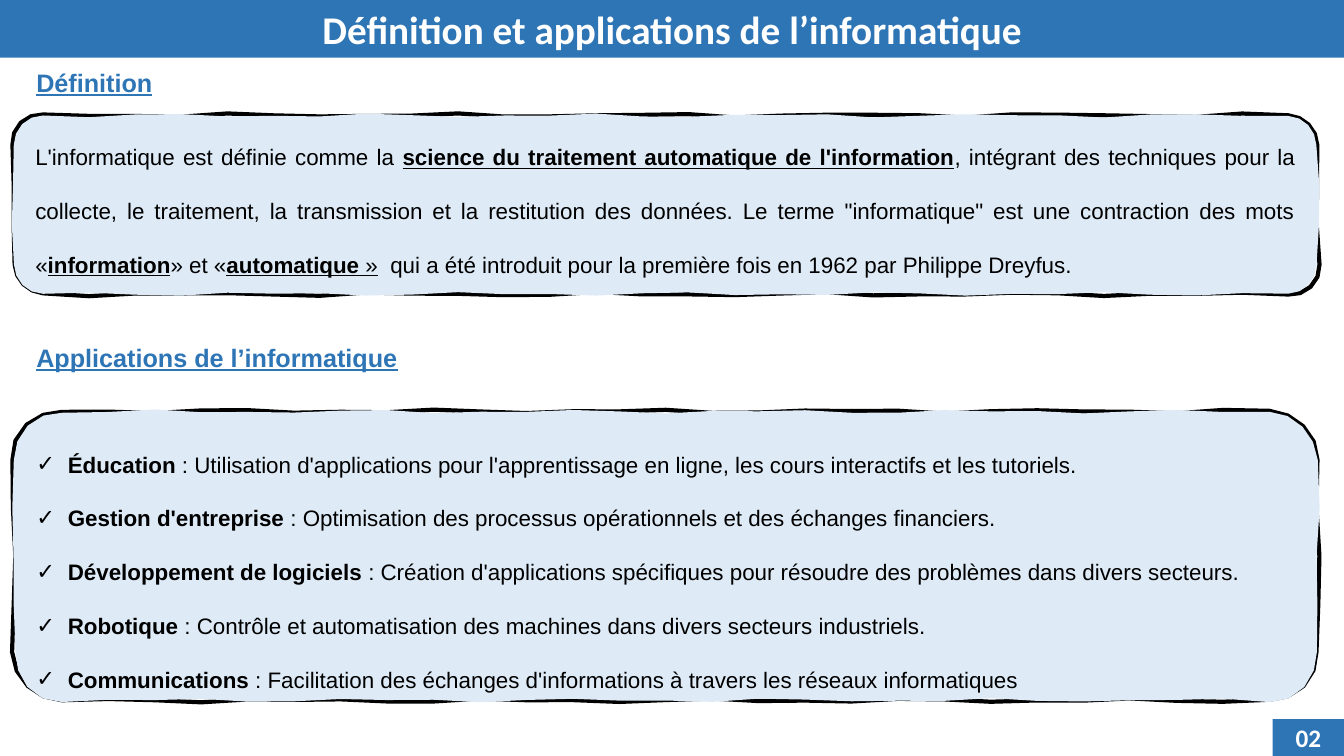
from dataclasses import dataclass
from math import cos, hypot, pi, sin
from typing import NamedTuple

from lxml import etree
from pptx import Presentation
from pptx.dml.color import RGBColor
from pptx.enum.shapes import MSO_SHAPE
from pptx.enum.text import MSO_ANCHOR, MSO_AUTO_SIZE, PP_ALIGN
from pptx.oxml.ns import qn
from pptx.util import Pt

PX = 9525
RECT = MSO_SHAPE.RECTANGLE
TOP, MIDDLE = MSO_ANCHOR.TOP, MSO_ANCHOR.MIDDLE
LEFT, CENTER, JUSTIFY = PP_ALIGN.LEFT, PP_ALIGN.CENTER, PP_ALIGN.JUSTIFY
NO_FIT = MSO_AUTO_SIZE.NONE
BENDS = 4
STRIDE = 44
COLORS = {"blue": "2E75B6", "pale": "DEEBF7", "ink": "000000", "white": "FFFFFF"}


class Box(NamedTuple):
    left: int
    top: int
    width: int
    height: int


class Run(NamedTuple):
    text: str
    bold: bool = False
    under: bool = False


@dataclass
class Panel:
    box: Box
    radius: int


PANELS = [
    Panel(Box(13, 110, 1242, 170), 28),
    Panel(Box(13, 392, 1242, 275), 46),
]
HEADS = {
    1: (Box(25, 59, 151, 38), "Définition"),
    3: (Box(25, 321, 393, 38), "Applications de l’informatique"),
}
MEANING = [
    Run("L'informatique est définie comme la "),
    Run("science du traitement automatique de l'information", True, True),
    Run(
        ", intégrant des techniques pour la collecte, le traitement, la transmission "
        "et la restitution des données. Le terme \"informatique\" est une contraction "
        "des mots «"
    ),
    Run("information", True, True),
    Run("» et «"),
    Run("automatique", True, True),
    Run(" »", False, True),
    Run("  qui a été introduit pour la première fois en 1962 par Philippe Dreyfus."),
]
USES = {
    "Éducation": "Utilisation d'applications pour l'apprentissage en ligne, "
    "les cours interactifs et les tutoriels.",
    "Gestion d'entreprise": "Optimisation des processus opérationnels "
    "et des échanges financiers.",
    "Développement de logiciels": "Création d'applications spécifiques "
    "pour résoudre des problèmes dans divers secteurs.",
    "Robotique": "Contrôle et automatisation des machines "
    "dans divers secteurs industriels.",
    "Communications": "Facilitation des échanges d'informations "
    "à travers les réseaux informatiques",
}


def tint(name: str) -> RGBColor:
    return RGBColor.from_string(COLORS[name])


def paint(shape, color: str) -> None:
    shape.fill.solid()
    shape.fill.fore_color.rgb = tint(color)
    shape.line.fill.background()


def place(shape, box: Box) -> None:
    shape.left, shape.top, shape.width, shape.height = (n * PX for n in box)


def bullet(para, mark: str, indent: int) -> None:
    props = para._p.get_or_add_pPr()
    props.set("marL", str(indent * PX))
    props.set("indent", str(-indent * PX))
    if mark:
        etree.SubElement(props, qn("a:buFont")).set("typeface", "Arial")
        etree.SubElement(props, qn("a:buChar")).set("char", mark)
    else:
        etree.SubElement(props, qn("a:buNone"))


def write(shape, paras: list[list[Run]], *, size: int, font: str = "Arial",
          color: str = "ink", align=LEFT, anchor=TOP, space: float = 1.0,
          mark: str = "", indent: int = 0) -> None:
    frame = shape.text_frame
    frame.word_wrap = True
    frame.auto_size = NO_FIT
    frame.vertical_anchor = anchor
    for i, runs in enumerate(paras):
        para = frame.add_paragraph() if i else frame.paragraphs[0]
        para.alignment = align
        para.line_spacing = space
        para.space_before = para.space_after = Pt(0)
        bullet(para, mark, indent)
        for item in runs:
            run = para.add_run()
            run.text = item.text
            run.font.name = font
            run.font.size = Pt(size)
            run.font.bold = item.bold
            run.font.underline = item.under
            run.font.color.rgb = tint(color)


def outline(panel: Panel, phase: float) -> list[tuple[float, float]]:
    left, top, width, height = panel.box
    rad = panel.radius
    right, low = left + width - rad, top + height - rad
    hubs = [(left + rad, top + rad), (right, top + rad),
            (right, low), (left + rad, low)]
    ring = []
    for i, (x, y) in enumerate(hubs):
        for step in range(BENDS + 1):
            turn = pi + (i + step / BENDS) * pi / 2
            ring.append((x + rad * cos(turn), y + rad * sin(turn), turn))
    dots = []
    walk = 0.0
    for (x, y, turn), (far, deep, _) in zip(ring, ring[1:] + ring[:1]):
        span = hypot(far - x, deep - y)
        count = max(1, round(span / STRIDE))
        for step in range(count):
            part = step / count
            dist = walk + span * part
            wave = 1.2 * sin(dist / 31 + phase) + 0.9 * sin(dist / 17 + 2 * phase)
            dots.append(((x + (far - x) * part + wave * cos(turn)) * PX,
                         (y + (deep - y) * part + wave * sin(turn)) * PX))
        walk += span
    return dots


def sketch(shapes, panel: Panel, phase: float):
    dots = outline(panel, phase)
    pen = shapes.build_freeform(*dots[0], scale=1.0)
    pen.add_line_segments(dots[1:], close=True)
    shape = pen.convert_to_shape()
    shape.shadow.inherit = False
    return shape


def frame(shapes, panel: Panel) -> None:
    edge = sketch(shapes, panel, 0.4)
    edge.fill.background()
    edge.line.color.rgb = tint("ink")
    edge.line.width = Pt(3)
    paint(sketch(shapes, panel, 2.6), "pale")


def main() -> None:
    deck = Presentation()
    deck.slide_width, deck.slide_height = 1280 * PX, 720 * PX
    slide = deck.slides.add_slide(deck.slide_layouts[4])
    shapes = slide.shapes
    slots = {slot.placeholder_format.idx: slot for slot in slide.placeholders}

    for panel in PANELS:
        frame(shapes, panel)
    for slot in slots.values():
        shapes.element.append(slot.element)

    title = slots[0]
    place(title, Box(0, 0, 1280, 55))
    paint(title, "blue")
    write(title, [[Run("Définition et applications de l’informatique", True)]],
          size=28, font="Calibri", color="white", align=CENTER, anchor=MIDDLE)

    for key, (box, text) in HEADS.items():
        place(slots[key], box)
        write(slots[key], [[Run(text, True, True)]], size=18, color="blue")

    place(slots[2], Box(24, 106, 1219, 156))
    write(slots[2], [MEANING], size=16, align=JUSTIFY, space=2.0)
    place(slots[4], Box(25, 399, 1174, 260))
    write(slots[4], [[Run(name, True), Run(" : " + use)] for name, use in USES.items()],
          size=16, space=2.0, mark="✓", indent=30)

    page = shapes.add_shape(RECT, *(n * PX for n in Box(1212, 685, 68, 35)))
    page.shadow.inherit = False
    paint(page, "blue")
    write(page, [[Run("02", True)]], size=18, font="Calibri", color="white",
          align=CENTER, anchor=MIDDLE)
    deck.save("out.pptx")


if __name__ == "__main__":
    main()
